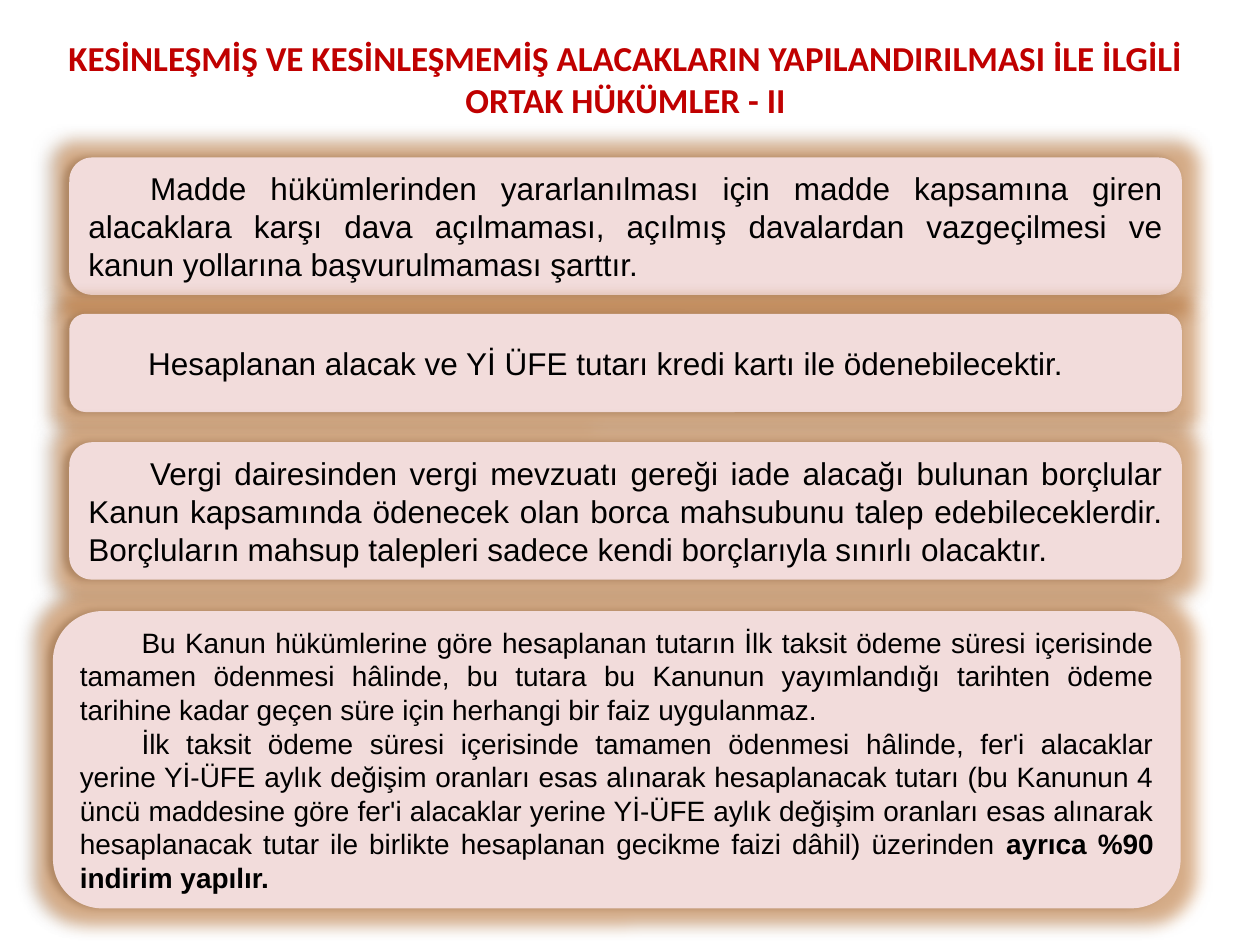
"""Build the slide of common provisions on restructured receivables, part II."""
from lxml.etree import SubElement
from pptx import Presentation
from pptx.dml.color import RGBColor
from pptx.enum.shapes import MSO_SHAPE as Shape
from pptx.enum.text import MSO_ANCHOR as Anchor, MSO_AUTO_SIZE as AutoSize, PP_ALIGN as Align
from pptx.oxml.ns import qn
from pptx.util import Inches, Pt

COLORS = {"title": "C00000", "panel": "F2DCDB", "text": "000000", "glow": "D06A10", "shadow": "000000"}
PANEL_FRAME = {"word_wrap": True, "auto_size": AutoSize.NONE, "vertical_anchor": Anchor.MIDDLE}
EFFECTS = [
    ("a:glow", {"rad": Pt(18)}, "glow"),
    ("a:outerShdw", {"blurRad": Pt(4), "dist": Pt(3), "dir": 180 * 60000, "rotWithShape": 0}, "shadow"),
]
PANELS = [
    ((0.55, 1.25, 8.83, 1.09), 18, [[
        ("Madde hükümlerinden yararlanılması için madde kapsamına giren alacaklara karşı dava "
         "açılmaması, açılmış davalardan vazgeçilmesi ve kanun yollarına başvurulmaması şarttır.", False)]]),
    ((0.55, 2.49, 8.83, 0.78), 18, [[
        ("Hesaplanan alacak ve Yİ ÜFE tutarı kredi kartı ile ödenebilecektir.", False)]]),
    ((0.55, 3.51, 8.83, 1.09), 18, [[
        ("Vergi dairesinden vergi mevzuatı gereği iade alacağı bulunan borçlular Kanun kapsamında "
         "ödenecek olan borca mahsubunu talep edebileceklerdir. Borçluların mahsup talepleri sadece "
         "kendi borçlarıyla sınırlı olacaktır.", False)]]),
    ((0.42, 4.85, 8.95, 2.36), 16, [
        [("Bu Kanun hükümlerine göre hesaplanan tutarın İlk taksit ödeme süresi içerisinde tamamen "
          "ödenmesi hâlinde, bu tutara bu Kanunun yayımlandığı tarihten ödeme tarihine kadar geçen "
          "süre için herhangi bir faiz uygulanmaz.", False)],
        [("İlk taksit ödeme süresi içerisinde tamamen ödenmesi hâlinde, fer'i alacaklar yerine Yİ-ÜFE "
          "aylık değişim oranları esas alınarak hesaplanacak tutarı (bu Kanunun 4 üncü maddesine göre "
          "fer'i alacaklar yerine Yİ-ÜFE aylık değişim oranları esas alınarak hesaplanacak tutar ile "
          "birlikte hesaplanan gecikme faizi dâhil) üzerinden ", False),
         ("ayrıca %90 indirim yapılır.", True)]]),
]


def add_span(para, text, color, **font_format):
    span = para.add_run()
    span.text = text
    span.font.color.rgb = RGBColor.from_string(COLORS[color])
    for name, value in font_format.items():
        setattr(span.font, name, value)


def add_effects(box):
    box.shadow.inherit = False
    effect_list = box.element.spPr.find(qn("a:effectLst"))
    for tag, settings, color in EFFECTS:
        effect = SubElement(effect_list, qn(tag), {name: str(value) for name, value in settings.items()})
        tint = SubElement(effect, qn("a:srgbClr"), val=COLORS[color])
        SubElement(tint, qn("a:alpha"), val="40000")


deck = Presentation()
deck.slide_width, deck.slide_height = Inches(10), Inches(7.5)
page = deck.slides.add_slide(deck.slide_layouts[5])

title = page.shapes.title
title.left, title.top, title.width, title.height = map(Inches, (0.16, 0.23, 9.61, 0.78))
for name, value in PANEL_FRAME.items():
    setattr(title.text_frame, name, value)
para = title.text_frame.paragraphs[0]
para.alignment = Align.CENTER
add_span(para, "KESİNLEŞMİŞ VE KESİNLEŞMEMİŞ ALACAKLARIN YAPILANDIRILMASI İLE İLGİLİ ORTAK HÜKÜMLER - II",
         "title", name="Calibri", size=Pt(20), bold=True)

for place, size, paragraphs in PANELS:
    box = page.shapes.add_shape(Shape.ROUNDED_RECTANGLE, *map(Inches, place))
    box.fill.solid()
    box.fill.fore_color.rgb = RGBColor.from_string(COLORS["panel"])
    box.line.fill.background()
    add_effects(box)
    frame = box.text_frame
    for name, value in PANEL_FRAME.items():
        setattr(frame, name, value)
    for index, spans in enumerate(paragraphs):
        para = frame.add_paragraph() if index else frame.paragraphs[0]
        para.alignment = Align.JUSTIFY
        para._p.get_or_add_pPr().set("indent", str(Inches(0.49)))
        for text, bold in spans:
            add_span(para, text, "text", name="Arial", size=Pt(size), bold=bold)

deck.save("out.pptx")
